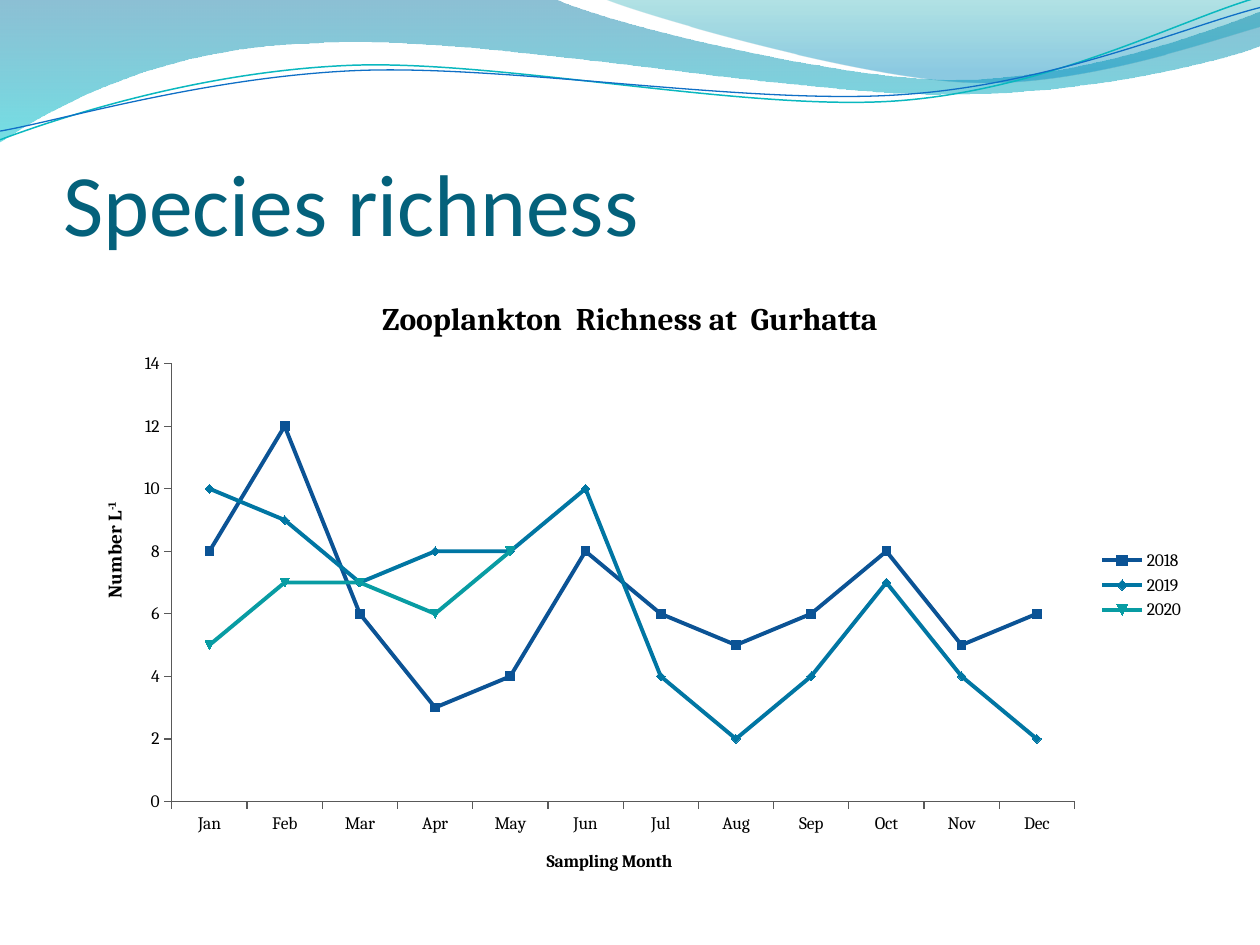
from lxml import etree
from pptx import Presentation
from pptx.chart.data import CategoryChartData
from pptx.dml.color import RGBColor
from pptx.enum import chart as ch, text as tx
from pptx.oxml import ns
from pptx.util import Pt


def rgb(code):
    return RGBColor.from_string(code)


def put(obj, vals):
    for key, val in vals.items():
        setattr(obj, key, val)


class Deck:
    serif = "Cambria"
    sans = "Calibri"
    ink = "000000"
    axis = "595959"

    def __init__(self, prs):
        self.page = prs.slides.add_slide(prs.slide_layouts[5])
        self.tree = prs.slide_master.shapes._spTree
        self.count = 0

    def form(self, start, parts, close):
        pts = [(Pt(x), Pt(y)) for part in parts
               for x, y in zip(part[::2], part[1::2])]
        pen = self.page.shapes.build_freeform(*map(Pt, start), scale=1.0)
        pen.add_line_segments(pts, close=close)
        shape = pen.convert_to_shape()
        shape.shadow.inherit = False
        legs = iter(list(shape._element.iter(ns.qn("a:lnTo"))))
        for part in parts:
            leg = next(legs)
            if len(part) == 6:
                leg.tag = ns.qn("a:cubicBezTo")
                for _ in range(2):
                    more = next(legs)
                    leg.append(more[0])
                    more.getparent().remove(more)
        return shape

    def back(self, shape):
        item = shape._element
        item.nvSpPr.cNvPr.id = 20 + self.count
        self.tree.insert(2 + self.count, item)
        self.count += 1

    def wave(self, start, parts, stops):
        shape = self.form(start, parts, True)
        shape.line.fill.background()
        shape.fill.gradient()
        shape.fill.gradient_angle = 270
        for stop, (pos, code, _) in zip(shape.fill.gradient_stops, stops):
            stop.position = pos
            stop.color.rgb = rgb(code)
        marks = shape._element.iter(ns.qn("a:srgbClr"))
        for mark, (_, _, alpha) in zip(marks, stops):
            etree.SubElement(mark, ns.qn("a:alpha"), val=str(alpha * 1000))
        self.back(shape)

    def line(self, start, parts, code, width):
        shape = self.form(start, parts, False)
        shape.fill.background()
        shape.line.color.rgb = rgb(code)
        shape.line.width = Pt(width)
        self.back(shape)

    def title(self, words, box):
        shape = self.page.shapes.title
        put(shape, dict(zip(("left", "top", "width", "height"), map(Pt, box))))
        frame = shape.text_frame
        put(frame, {"margin_left": 0, "margin_right": 0, "margin_top": Pt(3.6),
                    "margin_bottom": 0, "word_wrap": True,
                    "vertical_anchor": tx.MSO_ANCHOR.BOTTOM})
        frame.text = words
        para = frame.paragraphs[0]
        para.alignment = tx.PP_ALIGN.LEFT
        put(para.font, {"size": Pt(50), "name": self.sans, "bold": False})
        para.font.color.rgb = rgb("04617B")

    def label(self, frame, words, size, power=""):
        para = frame.paragraphs[0]
        for word in filter(None, (words, power)):
            run = para.add_run()
            run.text = word
            put(run.font, {"size": Pt(size), "bold": True, "name": self.serif})
            run.font.color.rgb = rgb(self.ink)
        if power:
            run.font._element.set("baseline", "30000")

    def place(self, item, spot, vals):
        for old in item.findall(ns.qn("c:layout")):
            item.remove(old)
        lay = etree.Element(ns.qn("c:layout"))
        item.insert(spot, lay)
        man = etree.SubElement(lay, ns.qn("c:manualLayout"))
        for key, val in vals.items():
            etree.SubElement(man, ns.qn("c:" + key), val=str(val))

    def chart(self, box, cats, rows):
        data = CategoryChartData()
        data.categories = cats
        for name, vals, _ in rows:
            data.add_series(name, vals + [None] * (len(cats) - len(vals)))
        chart = self.page.shapes.add_chart(
            ch.XL_CHART_TYPE.LINE_MARKERS, *map(Pt, box), data).chart
        put(chart.font, {"size": Pt(10), "name": self.serif})
        chart.font.color.rgb = rgb(self.ink)
        chart.has_title = True
        self.label(chart.chart_title.text_frame,
                   "Zooplankton  Richness at  Gurhatta", 18)
        chart.has_legend = True
        put(chart.legend, {"position": ch.XL_LEGEND_POSITION.RIGHT,
                           "include_in_layout": False})
        plot = chart.plots[0]
        plot.vary_by_categories = False
        for item, (_, _, code) in zip(plot.series, rows):
            item.smooth = False
            item.format.line.color.rgb = rgb(code)
            item.format.line.width = Pt(2.25)
            item.marker.format.fill.solid()
            item.marker.format.fill.fore_color.rgb = rgb(code)
            item.marker.format.line.color.rgb = rgb(code)
        for axis, *words in ((chart.category_axis, "Sampling Month", 10),
                             (chart.value_axis, "Number L", 11, "-1")):
            put(axis, {"has_major_gridlines": False,
                       "major_tick_mark": ch.XL_TICK_MARK.OUTSIDE,
                       "minor_tick_mark": ch.XL_TICK_MARK.NONE})
            axis.format.line.color.rgb = rgb(self.axis)
            axis.format.line.width = Pt(0.75)
            self.label(axis.axis_title.text_frame, *words)
        put(chart.value_axis, {"minimum_scale": 0, "maximum_scale": 14,
                               "major_unit": 2})
        edge = {"xMode": "edge", "yMode": "edge"}
        self.place(chart.value_axis.axis_title._element, 1,
                   {**edge, "x": 0.03, "y": 0.36})
        area = chart._chartSpace.find(".//" + ns.qn("c:plotArea"))
        self.place(area, 0, {"layoutTarget": "inner", **edge, "x": 0.096,
                             "y": 0.145, "w": 0.796, "h": 0.702})


def main():
    prs = Presentation()
    put(prs, {"slide_width": Pt(720), "slide_height": Pt(540)})
    deck = Deck(prs)
    deck.wave((0, 0), [
        (316.8, -0.7), (342.7, 12.2, 478.1, 45.4, 545.8, 45.4),
        (614.2, 45.4, 689.8, 18.7, 720, 6.5), (720.7, 25.9),
        (707.8, 31.7, 626.4, 54.7, 537.1, 54),
        (447.8, 54, 275, 20.2, 185, 24.5),
        (92.9, 25.9, 33.1, 59.8, -0.7, 81.4)],
        [(0, "0074A1", 45), (1, "00C6CF", 55)])
    deck.wave((344.9, -0.7), [
        (366.5, 8.6, 491, 44.6, 553.7, 46.8),
        (616.3, 49.7, 691.9, 23, 720, 15.1), (720, 0)],
        [(0, "00A1A9", 30), (0.8, "008BBF", 45)])
    deck.line((0, 79.9), [
        (34.6, 67, 113.8, 41, 199.4, 37.4),
        (284.4, 33.8, 427, 64.1, 513.4, 57.6),
        (599.8, 51.1, 675.4, 10.8, 718.6, -1.4)], "0AB8BF", 0.85)
    deck.line((0, 74.9), [
        (33.8, 69.1, 118.1, 43.9, 203.8, 40.3),
        (290.2, 36.7, 429.8, 60.5, 516.2, 54),
        (601.9, 48.2, 677.5, 15.1, 720, 4.3)], "0F6FC6", 0.75)
    deck.title("Species richness", (36, 55.4, 648, 90))
    deck.chart(
        (36, 156.2, 648, 356.4),
        "Jan Feb Mar Apr May Jun Jul Aug Sep Oct Nov Dec".split(),
        [("2018", [8, 12, 6, 3, 4, 8, 6, 5, 6, 8, 5, 6], "0B5395"),
         ("2019", [10, 9, 7, 8, 8, 10, 4, 2, 4, 7, 4, 2], "0076A3"),
         ("2020", [5, 7, 7, 6, 8], "089CA3")])
    prs.save("out.pptx")


if __name__ == "__main__":
    main()
